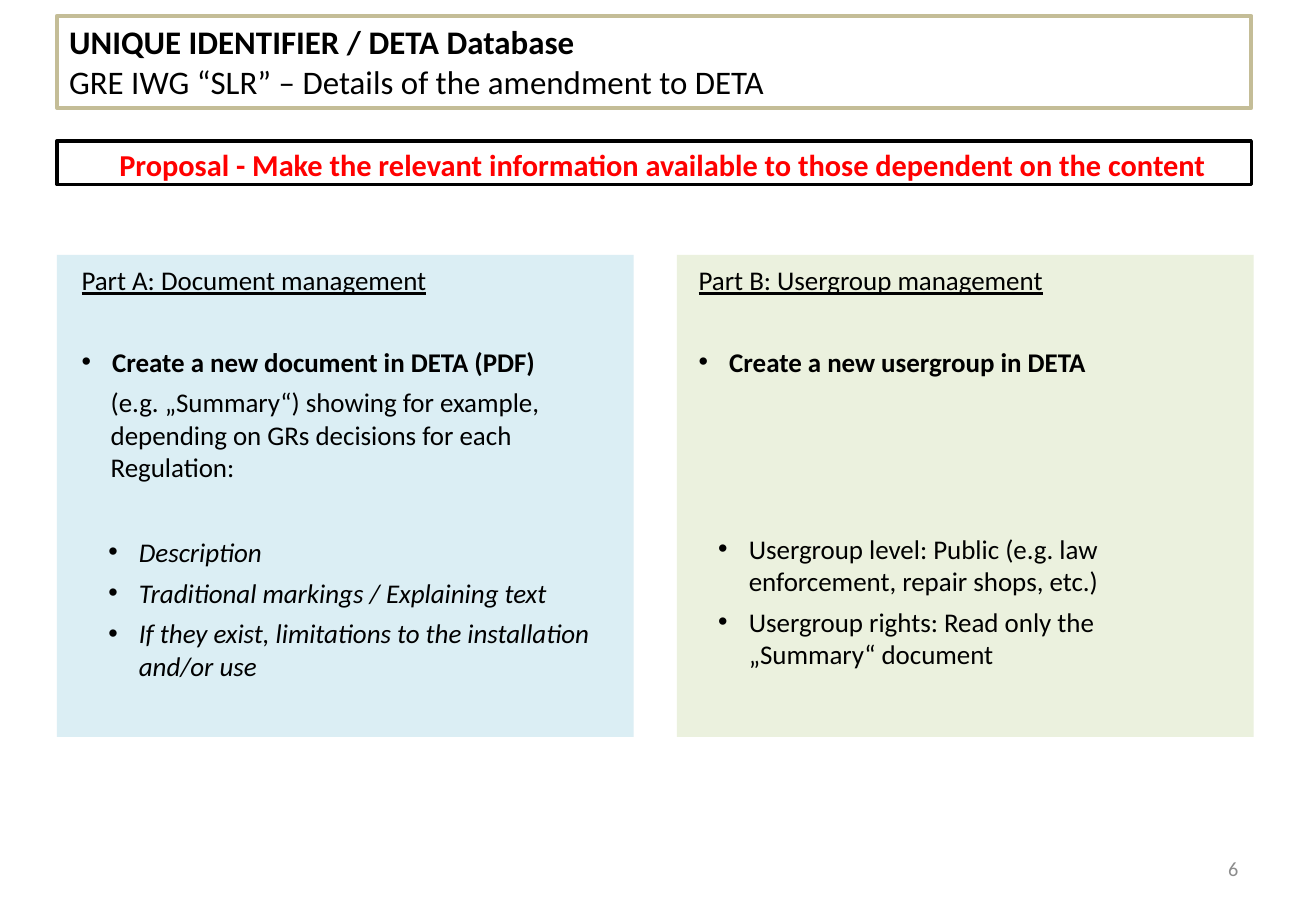
from dataclasses import dataclass

from lxml import etree
from pptx import Presentation
from pptx.dml.color import RGBColor
from pptx.enum.shapes import MSO_SHAPE
from pptx.enum.text import MSO_ANCHOR, MSO_AUTO_SIZE, PP_ALIGN
from pptx.oxml.ns import qn
from pptx.shapes.autoshape import Shape
from pptx.util import Cm, Pt

RECT = MSO_SHAPE.RECTANGLE
TOP, MIDDLE = MSO_ANCHOR.TOP, MSO_ANCHOR.MIDDLE
LEFT, CENTER, RIGHT = PP_ALIGN.LEFT, PP_ALIGN.CENTER, PP_ALIGN.RIGHT
NO_FIT = MSO_AUTO_SIZE.NONE

BLACK = RGBColor(0x00, 0x00, 0x00)
WHITE = RGBColor(0xFF, 0xFF, 0xFF)
RED = RGBColor(0xFF, 0x00, 0x00)
GREY = RGBColor(0x8C, 0x8C, 0x8C)
TAN = RGBColor(0xC4, 0xBD, 0x97)
BLUE = RGBColor(0xDB, 0xEE, 0xF4)
GREEN = RGBColor(0xEB, 0xF1, 0xDE)

FONT = "Calibri"
GAP = 4.9
WIDE_GAP = 29.3
HANG = 0.64
EDGE, WIDTH = 1.19, 24.97
PANEL_TOP, PANEL_WIDTH, PANEL_HEIGHT = 5.33, 12.06, 10.08


@dataclass
class Box:
    left: float
    top: float
    width: float
    height: float


@dataclass
class Line:
    text: str
    size: float = 16
    bold: bool = False
    italic: bool = False
    under: bool = False
    color: RGBColor = BLACK
    align: PP_ALIGN = LEFT
    gap: float = GAP
    indent: float = 0
    bullet: bool = False
    level: int = 0


@dataclass
class Part:
    left: float
    fill: RGBColor
    head: Box
    intro: list[Line]
    body: Box
    items: list[str]
    italic: bool


def place(shape: Shape, box: Box) -> None:
    shape.left, shape.top = Cm(box.left), Cm(box.top)
    shape.width, shape.height = Cm(box.width), Cm(box.height)


def write(shape: Shape, lines: list[Line], anchor: MSO_ANCHOR = TOP) -> None:
    frame = shape.text_frame
    frame.text = "\n".join(line.text for line in lines)
    frame.word_wrap = True
    frame.auto_size = NO_FIT
    frame.vertical_anchor = anchor
    for order, (para, line) in enumerate(zip(frame.paragraphs, lines)):
        props = para._p.get_or_add_pPr()
        props.set("marL", str(Cm(line.indent)))
        props.set("indent", str(Cm(-HANG if line.bullet else 0)))
        if line.bullet:
            etree.SubElement(props, qn("a:buFont")).set("typeface", "Arial")
            etree.SubElement(props, qn("a:buChar")).set("char", "•")
        else:
            etree.SubElement(props, qn("a:buNone"))
        para.level = line.level
        para.alignment = line.align
        para.space_before = Pt(line.gap if order else 0)
        for run in para.runs:
            font = run.font
            font.name, font.size = FONT, Pt(line.size)
            font.bold, font.italic = line.bold, line.italic
            font.underline = line.under
            font.color.rgb = line.color


def block(shapes, box: Box, fill: RGBColor) -> Shape:
    """Add a flat rectangle without an outline."""
    shape = shapes.add_shape(RECT, Cm(box.left), Cm(box.top),
                             Cm(box.width), Cm(box.height))
    shape.shadow.inherit = False
    shape.fill.solid()
    shape.fill.fore_color.rgb = fill
    shape.line.fill.background()
    return shape


def frame(shape: Shape, color: RGBColor, width: float) -> None:
    shape.line.color.rgb = color
    shape.line.width = Pt(width)


PARTS = [
    Part(EDGE, BLUE, Box(1.45, 5.38, 11.56, 4.9), [
        Line("Part A: Document management", under=True),
        Line("Create a new document in DETA (PDF)", bold=True,
             gap=WIDE_GAP, indent=HANG, bullet=True),
        Line("(e.g. „Summary“) showing for example, depending on GRs "
             "decisions for each Regulation:", indent=0.61),
    ], Box(0.97, 11.07, 12.04, 3.35), [
        "Description",
        "Traditional markings / Explaining text",
        "If they exist, limitations to the installation and/or use",
    ], True),
    Part(14.15, GREEN, Box(14.35, 5.38, 11.38, 2.67), [
        Line("Part B: Usergroup management", under=True),
        Line("Create a new usergroup in DETA", bold=True,
             gap=WIDE_GAP, indent=HANG, bullet=True),
    ], Box(13.72, 11.0, 11.56, 3.18), [
        "Usergroup level: Public (e.g. law enforcement, repair shops, etc.)",
        "Usergroup rights: Read only the „Summary“ document",
    ], False),
]


def main() -> None:
    deck = Presentation()
    deck.slide_width, deck.slide_height = Cm(27.51), Cm(19.05)
    slide = deck.slides.add_slide(deck.slide_layouts.get_by_name("Comparison"))
    shapes = slide.shapes
    title, *holders = slide.placeholders

    place(title, Box(EDGE, 0.33, WIDTH, 1.93))
    frame(title, TAN, 2.25)
    write(title, [
        Line("UNIQUE IDENTIFIER / DETA Database", 19.5, bold=True),
        Line("GRE IWG “SLR” – Details of the amendment to DETA", 19.5, gap=0),
    ])

    banner = block(shapes, Box(EDGE, 2.95, WIDTH, 0.91), WHITE)
    frame(banner, BLACK, 2)
    write(banner, [Line("Proposal - Make the relevant information available "
                        "to those dependent on the content", 18, bold=True,
                        color=RED, align=CENTER)])
    banner.text_frame.margin_left = Cm(0.64)
    banner.text_frame.margin_right = Cm(0.28)
    banner.text_frame.margin_top = Cm(0.1)

    for part, head, body in zip(PARTS, holders[::2], holders[1::2]):
        panel = block(shapes, Box(part.left, PANEL_TOP, PANEL_WIDTH,
                                  PANEL_HEIGHT), part.fill)
        title.element.addprevious(panel.element)
        place(head, part.head)
        write(head, part.intro)
        place(body, part.body)
        write(body, [Line(item, italic=part.italic, indent=1.68,
                          bullet=True, level=1) for item in part.items])

    number = shapes.add_textbox(Cm(19.71), Cm(17.65), Cm(6.43), Cm(1.02))
    write(number, [Line("6", 12, color=GREY, align=RIGHT)], MIDDLE)
    deck.save("out.pptx")


if __name__ == "__main__":
    main()
